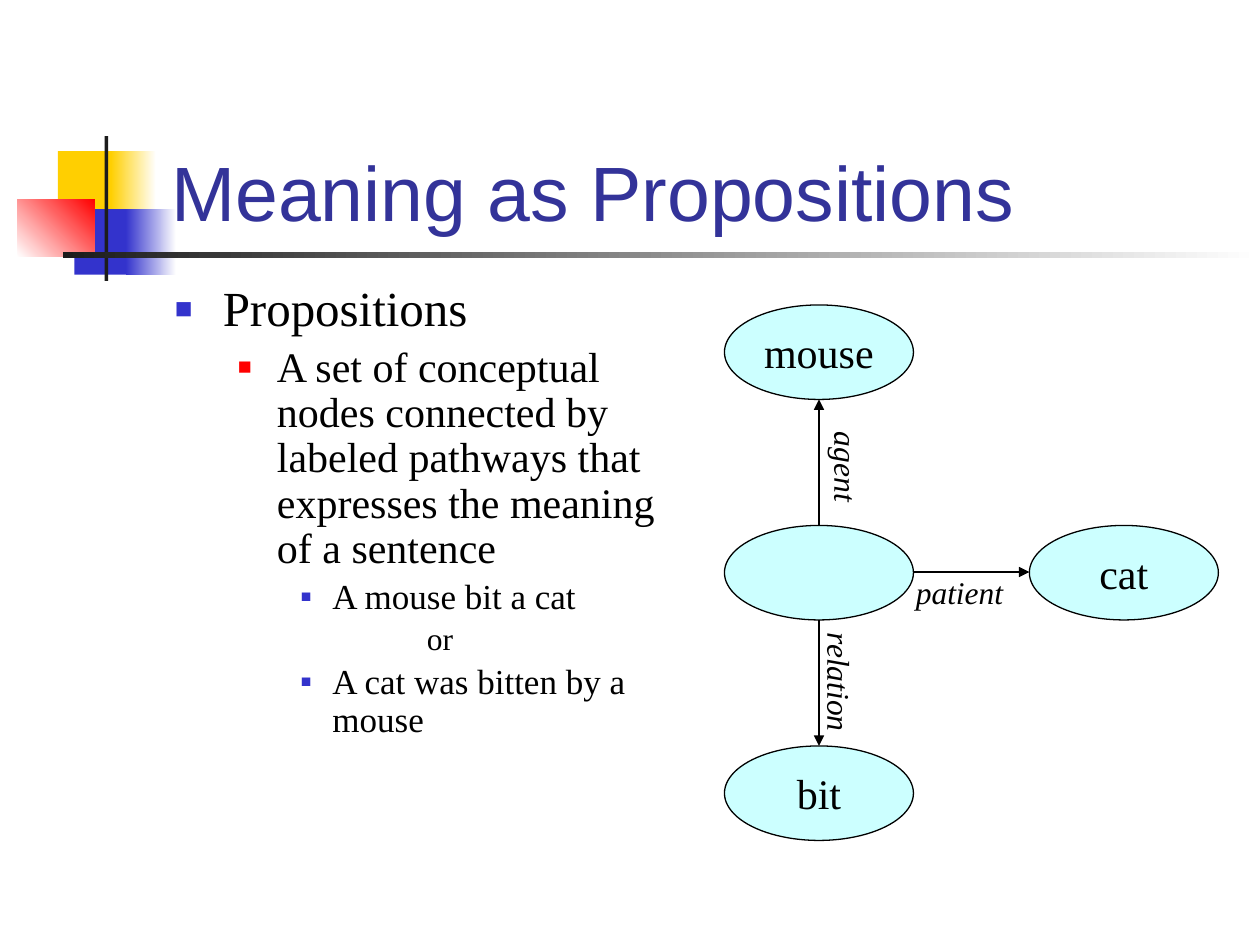
from lxml.etree import SubElement
from pptx import Presentation
from pptx.dml.color import RGBColor
from pptx.enum.shapes import MSO_CONNECTOR, MSO_SHAPE
from pptx.enum.text import MSO_ANCHOR, MSO_AUTO_SIZE, PP_ALIGN
from pptx.oxml.ns import qn
from pptx.util import Inches, Pt

COLORS = {
    "yellow": "FFCF01", "blue": "3333CC", "red": "FF0000", "white": "FFFFFF",
    "dark": "1C1C1C", "title": "333399", "black": "000000", "node": "CCFFFF",
}
SERIF = "Times New Roman"
NODE_WIDTH, NODE_HEIGHT = 1.5, 0.75
DECORATIONS = [
    ((0.46, 1.2, 0.48, 0.52), ["yellow"], 0),
    ((0.88, 1.2, 0.36, 0.52), ["yellow", "white"], 0),
    ((0.59, 1.66, 0.46, 0.52), ["blue"], 0),
    ((1, 1.66, 0.4, 0.52), ["blue", "white"], 0),
    ((0.14, 1.58, 0.61, 0.46), ["white", "red"], 45),
    ((0.83, 1.08, 0.03, 1.15), ["dark"], 0),
    ((0.5, 2, 9.5, 0.05), ["dark", "white"], 0),
]
BODY = [
    ("Propositions", 0, 28, 0.38, -0.38, ("blue", 60)),
    ("A set of conceptual nodes connected by labeled pathways that expresses "
     "the meaning of a sentence", 1, 24, 0.81, -0.31, ("red", 55)),
    ("A mouse bit a cat", 2, 20, 1.25, -0.25, ("blue", 50)),
    ("or", 4, 18, 2, 0, None),
    ("A cat was bitten by a mouse", 2, 20, 1.25, -0.25, ("blue", 50)),
]
NODES = [("mouse", 5.75, 2.42), ("bit", 5.75, 5.92), ("cat", 8.17, 4.17), ("", 5.75, 4.17)]
ARROWS = [(6.5, 4.17, 6.5, 3.17), (6.5, 4.92, 6.5, 5.92), (7.25, 4.54, 8.17, 4.54)]
LABELS = [
    ("agent", (6.34, 3.51, 0.76, 0.4), 90),
    ("patient", (7.17, 4.5, 0.9, 0.4), 0),
    ("relation", (6.17, 5.22, 0.99, 0.4), 90),
]


def rgb(name):
    """Return the named colour."""
    return RGBColor.from_string(COLORS[name])


def apply_format(target, values):
    """Set each attribute of the target from a dict."""
    for name, value in values.items():
        setattr(target, name, value)


def add_run(paragraph, text, size, font=SERIF, color="black", italic=None):
    """Add formatted text to a paragraph."""
    run = paragraph.add_run()
    run.text = text
    apply_format(run.font, {"name": font, "size": Pt(size), "italic": italic})
    run.font.color.rgb = rgb(color)


def add_decoration(slide, box, colors, angle):
    """Add a borderless rectangle with a solid or gradient fill."""
    shape = slide.shapes.add_shape(MSO_SHAPE.RECTANGLE, *map(Inches, box))
    shape.shadow.inherit = False
    shape.line.fill.background()
    if len(colors) == 1:
        shape.fill.solid()
        shape.fill.fore_color.rgb = rgb(colors[0])
        return
    shape.fill.gradient()
    shape.fill.gradient_angle = angle
    for stop, color in zip(shape.fill.gradient_stops, colors):
        stop.color.rgb = rgb(color)


def add_text_box(slide, box, **frame_format):
    """Add an empty text box and return it."""
    shape = slide.shapes.add_textbox(*map(Inches, box))
    apply_format(shape.text_frame, frame_format)
    return shape


def add_bullet(properties, color, percent):
    """Give paragraph properties a coloured square bullet."""
    bullet_color = SubElement(properties, qn("a:buClr"))
    SubElement(bullet_color, qn("a:srgbClr"), val=COLORS[color])
    SubElement(properties, qn("a:buSzPct"), val=str(percent * 1000))
    SubElement(properties, qn("a:buFont"), typeface="Arial")
    SubElement(properties, qn("a:buChar"), char="■")


def add_body(slide):
    """Add the bulleted outline."""
    frame = add_text_box(slide, (1.29, 2.21, 4.17, 4.5), word_wrap=True).text_frame
    for index, (text, level, size, margin, indent, bullet) in enumerate(BODY):
        paragraph = frame.add_paragraph() if index else frame.paragraphs[0]
        apply_format(paragraph, {
            "level": level, "line_spacing": 0.9, "space_before": Pt(0.2 * size),
        })
        properties = paragraph._p.get_or_add_pPr()
        properties.set("marL", str(Inches(margin)))
        properties.set("indent", str(Inches(indent)))
        if bullet:
            add_bullet(properties, *bullet)
        add_run(paragraph, text, size)


def add_node(slide, text, left, top):
    """Add one ellipse of the diagram."""
    box = (left, top, NODE_WIDTH, NODE_HEIGHT)
    shape = slide.shapes.add_shape(MSO_SHAPE.OVAL, *map(Inches, box))
    shape.shadow.inherit = False
    shape.fill.solid()
    shape.fill.fore_color.rgb = rgb("node")
    shape.line.color.rgb = rgb("black")
    shape.line.width = Pt(0.75)
    apply_format(shape.text_frame, {
        "word_wrap": False, "vertical_anchor": MSO_ANCHOR.MIDDLE,
    })
    if text:
        paragraph = shape.text_frame.paragraphs[0]
        paragraph.alignment = PP_ALIGN.CENTER
        add_run(paragraph, text, 24)


def add_arrow(slide, points):
    """Add a straight arrow with a triangular head."""
    connector = slide.shapes.add_connector(MSO_CONNECTOR.STRAIGHT, *map(Inches, points))
    connector.line.color.rgb = rgb("black")
    connector.line.width = Pt(0.75)
    SubElement(connector.line._get_or_add_ln(), qn("a:tailEnd"), type="triangle")
    SubElement(connector._element.spPr, qn("a:effectLst"))


def add_label(slide, text, box, rotation):
    """Add an italic pathway label."""
    shape = add_text_box(slide, box, word_wrap=False,
                         auto_size=MSO_AUTO_SIZE.SHAPE_TO_FIT_TEXT)
    shape.rotation = rotation
    add_run(shape.text_frame.paragraphs[0], text, 18, italic=True)


def main():
    """Build and save the slide."""
    presentation = Presentation()
    apply_format(presentation, {"slide_width": Inches(10), "slide_height": Inches(7.5)})
    slide = presentation.slides.add_slide(presentation.slide_layouts[6])
    for decoration in DECORATIONS:
        add_decoration(slide, *decoration)
    title = add_text_box(slide, (1.26, 0.68, 8.52, 1.25), word_wrap=True,
                         vertical_anchor=MSO_ANCHOR.BOTTOM)
    add_run(title.text_frame.paragraphs[0], "Meaning as Propositions", 44, "Arial", "title")
    add_body(slide)
    for node in NODES:
        add_node(slide, *node)
    for points in ARROWS:
        add_arrow(slide, points)
    for label in LABELS:
        add_label(slide, *label)
    presentation.save("out.pptx")


if __name__ == "__main__":
    main()
